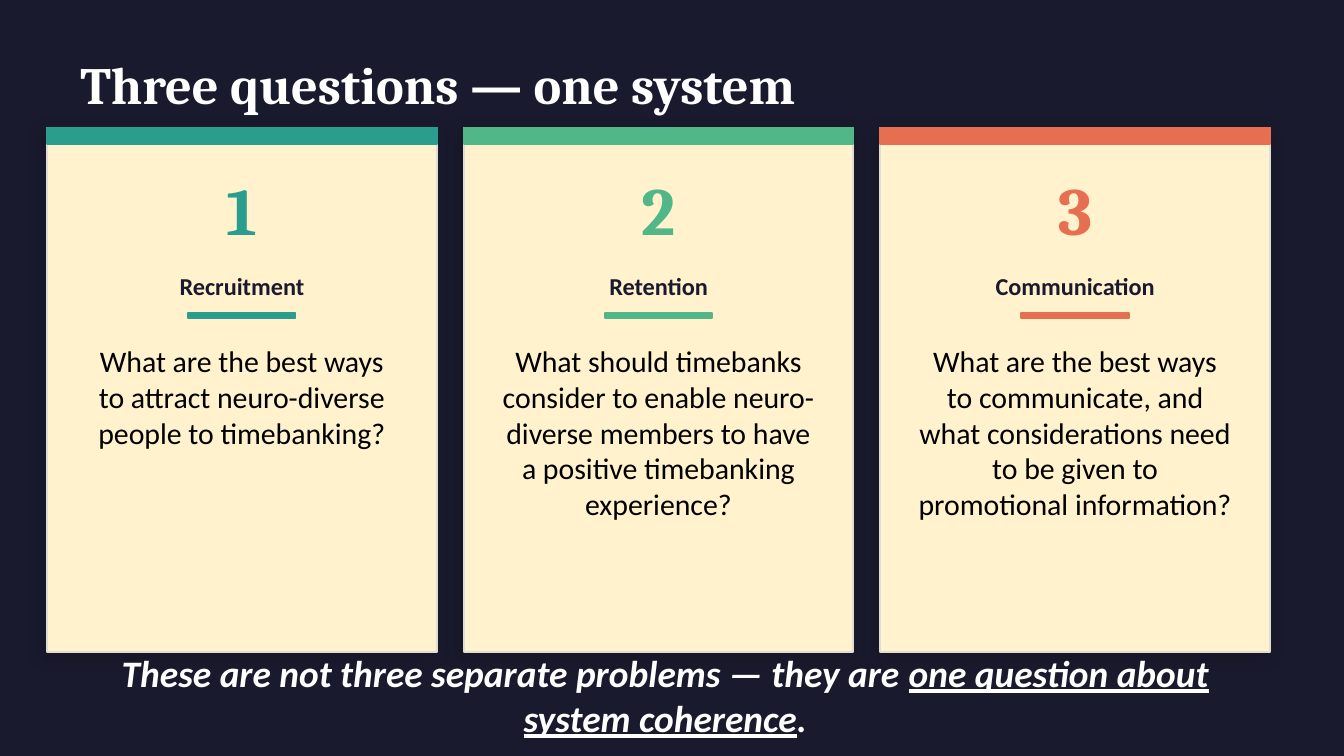
from dataclasses import dataclass

import lxml.etree
import pptx
import pptx.dml.color
import pptx.enum.shapes
import pptx.enum.text
import pptx.oxml.ns
import pptx.shapes.autoshape
import pptx.slide
import pptx.util

Pt = pptx.util.Pt
COLORS = {
    "night": "1A1A2E",
    "cream": "FFF2CC",
    "border": "E0DDD4",
    "white": "FFFFFF",
    "black": "000000",
    "teal": "2A9D8F",
    "green": "52B788",
    "coral": "E76F51",
}
CARD_LEFT, CARD_TOP, CARD_WIDTH, CARD_HEIGHT = 25.2, 68.4, 208.8, 280.8
CARD_GAP = 14.4
CENTER = pptx.enum.text.PP_ALIGN.CENTER
LEFT = pptx.enum.text.PP_ALIGN.LEFT
TOP = pptx.enum.text.MSO_ANCHOR.TOP
MIDDLE = pptx.enum.text.MSO_ANCHOR.MIDDLE

TITLE = {"name": "Cambria", "size": Pt(28), "bold": True}
NUMBER = {"name": "Cambria", "size": Pt(36), "bold": True}
TOPIC = {"name": "Calibri", "size": Pt(13), "bold": True}
QUESTION = {"name": "Calibri", "size": Pt(16)}
CLOSING = {"name": "Calibri", "size": Pt(20), "bold": True, "italic": True}
UNDERLINED = {**CLOSING, "underline": True}


@dataclass
class Box:
    left: float
    top: float
    width: float
    height: float

    def lengths(self) -> list[pptx.util.Length]:
        return [Pt(v) for v in (self.left, self.top, self.width, self.height)]


@dataclass
class Card:
    topic: str
    question: str
    accent: str


CARDS = [
    Card("Recruitment",
         "What are the best ways to attract neuro-diverse people to timebanking?",
         "teal"),
    Card("Retention",
         "What should timebanks consider to enable neuro-diverse members to have "
         "a positive timebanking experience?",
         "green"),
    Card("Communication",
         "What are the best ways to communicate, and what considerations need "
         "to be given to promotional information?",
         "coral"),
]


def rgb(color: str) -> pptx.dml.color.RGBColor:
    return pptx.dml.color.RGBColor.from_string(COLORS[color])


def add_rectangle(slide: pptx.slide.Slide, box: Box, fill: str,
                  line: str) -> pptx.shapes.autoshape.Shape:
    rectangle = slide.shapes.add_shape(
        pptx.enum.shapes.MSO_SHAPE.RECTANGLE, *box.lengths())
    rectangle.shadow.inherit = False
    rectangle.fill.solid()
    rectangle.fill.fore_color.rgb = rgb(fill)
    rectangle.line.color.rgb = rgb(line)
    rectangle.line.width = Pt(1)
    return rectangle


def add_soft_shadow(panel: pptx.shapes.autoshape.Shape) -> None:
    qn = pptx.oxml.ns.qn
    effects = panel._element.spPr.find(qn("a:effectLst"))
    shadow = lxml.etree.SubElement(
        effects, qn("a:outerShdw"), blurRad=str(Pt(8)), dist=str(Pt(3)),
        dir=str(135 * 60000), algn="bl", rotWithShape="0")
    tint = lxml.etree.SubElement(shadow, qn("a:srgbClr"), val=COLORS["black"])
    lxml.etree.SubElement(tint, qn("a:alpha"), val="18000")


def add_text(slide: pptx.slide.Slide, box: Box, pieces: list[tuple[str, dict]],
             color: str, align=CENTER, anchor=MIDDLE) -> None:
    frame = slide.shapes.add_textbox(*box.lengths()).text_frame
    frame.word_wrap = True
    frame.vertical_anchor = anchor
    paragraph = frame.paragraphs[0]
    paragraph.alignment = align
    for words, style in pieces:
        run = paragraph.add_run()
        run.text = words
        for attribute, value in style.items():
            setattr(run.font, attribute, value)
        run.font.color.rgb = rgb(color)


def add_card(slide: pptx.slide.Slide, index: int, card: Card) -> None:
    left = CARD_LEFT + index * (CARD_WIDTH + CARD_GAP)

    def centered(top: float, width: float, height: float) -> Box:
        return Box(left + (CARD_WIDTH - width) / 2, top, width, height)

    panel = add_rectangle(slide, centered(CARD_TOP, CARD_WIDTH, CARD_HEIGHT),
                          "cream", "border")
    add_soft_shadow(panel)
    add_rectangle(slide, centered(CARD_TOP, CARD_WIDTH, 8.64),
                  card.accent, card.accent)
    add_text(slide, centered(82.8, CARD_WIDTH, 57.6),
             [(str(index + 1), NUMBER)], card.accent)
    add_text(slide, centered(136.8, 187.2, 32.4), [(card.topic, TOPIC)], "night")
    add_rectangle(slide, centered(167.76, 57.6, 2.88), card.accent, card.accent)
    add_text(slide, centered(180, 182.88, 151.2),
             [(card.question, QUESTION)], "black", anchor=TOP)


def main() -> None:
    deck = pptx.Presentation()
    deck.slide_width, deck.slide_height = Pt(720), Pt(405)
    slide = deck.slides.add_slide(deck.slide_layouts[6])
    slide.background.fill.solid()
    slide.background.fill.fore_color.rgb = rgb("night")

    add_text(slide, Box(36, 21.6, 648, 46.8),
             [("Three questions — one system", TITLE)], "white", align=LEFT)
    for index, card in enumerate(CARDS):
        add_card(slide, index, card)
    add_text(slide, Box(32.4, 358.56, 648, 27.36), [
        ("These are not three separate problems — they are ", CLOSING),
        ("one question about system coherence", UNDERLINED),
        (".", CLOSING),
    ], "white")
    deck.save("out.pptx")


if __name__ == "__main__":
    main()
